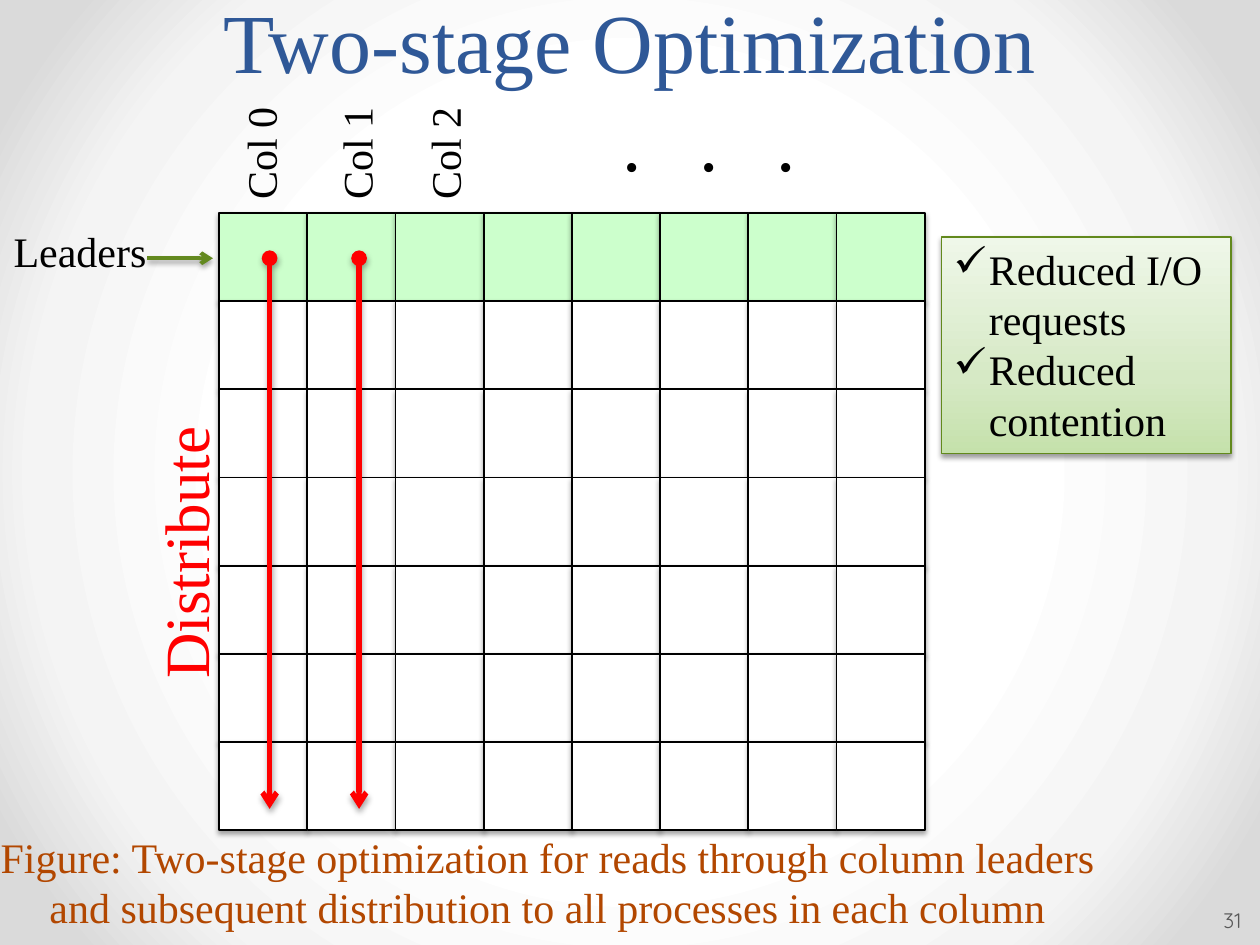
from dataclasses import dataclass

from pptx import Presentation
from pptx.dml.color import RGBColor
from pptx.enum.shapes import MSO_CONNECTOR as Connector, MSO_SHAPE as Shape
from pptx.enum.text import MSO_ANCHOR as Anchor, MSO_AUTO_SIZE as AutoSize, PP_ALIGN as Align
from pptx.oxml import parse_xml
from pptx.oxml.ns import nsdecls, qn
from pptx.util import Inches, Pt

BLACK = RGBColor(0x00, 0x00, 0x00)
WHITE = RGBColor(0xFF, 0xFF, 0xFF)
RED = RGBColor(0xFF, 0x00, 0x00)
LEADER_GREEN = RGBColor(0xCC, 0xFF, 0xCC)
ARROW_GREEN = RGBColor(0x63, 0x89, 0x1F)
BOX_GREEN = RGBColor(0x62, 0x89, 0x1C)
TITLE_BLUE = RGBColor(0x2F, 0x58, 0x97)
CAPTION_ORANGE = RGBColor(0xB2, 0x47, 0x00)
NUMBER_GRAY = RGBColor(0x59, 0x59, 0x59)
BACKDROP_STOPS = [(50, WHITE), (76, RGBColor(0xF4, 0xF4, 0xF4)), (92, RGBColor(0xDA, 0xDA, 0xDA))]
BOX_STOPS = [(0, RGBColor(0xC5, 0xE1, 0xAB)), (35, RGBColor(0xD6, 0xE9, 0xC5)),
             (100, RGBColor(0xEF, 0xF7, 0xE9))]
SERIF = "Times New Roman"

# Grid of processes
ROWS, COLUMNS, CELL = 7, 8, 0.7
GRID_LEFT, GRID_TOP = 1.74, 1.69


@dataclass
class Label:
    text: str
    left: float
    top: float
    width: float
    height: float
    size: int = 24
    color: RGBColor = BLACK
    rotation: int = 0
    align: Align = Align.CENTER
    wrap: bool = True
    font: str = SERIF


@dataclass
class Arrow:
    start: tuple[float, float]
    end: tuple[float, float]
    color: RGBColor
    width: float
    head: str = "none"


LABELS = [
    Label("Col 0", 1.44, 0.97, 1.25, 0.5, rotation=270),
    Label("Col 1", 2.2, 0.97, 1.25, 0.5, rotation=270),
    Label("Col 2", 2.9, 0.97, 1.25, 0.5, rotation=270),
    Label(".   .   .", 4.22, 0.7, 2.81, 0.84, size=44),
    Label("Leaders", -0.08, 1.74, 1.43, 0.5),
    Label("Distribute", 0.35, 4.01, 2.24, 0.71, 36, RED, 270, Align.LEFT, wrap=False),
    Label("Figure: Two-stage optimization for reads through column leaders "
          "and subsequent distribution to all processes in each column",
          -0.15, 6.55, 8.99, 0.91, color=CAPTION_ORANGE),
]
ARROWS = [
    Arrow((1.17, 2.05), (1.69, 2.05), ARROW_GREEN, 2.25),
    Arrow((2.14, 2.05), (2.14, 6.42), RED, 3, "oval"),
    Arrow((2.85, 2.05), (2.85, 6.42), RED, 3, "oval"),
]


def gradient(stops: list, direction: str):
    stop_xml = "".join(f'<a:gs pos="{position * 1000}"><a:srgbClr val="{color}"/></a:gs>'
                       for position, color in stops)
    return parse_xml(f'<a:gradFill {nsdecls("a")} rotWithShape="1">'
                     f'<a:gsLst>{stop_xml}</a:gsLst>{direction}</a:gradFill>')


def set_background(slide) -> None:
    background = parse_xml(f'<p:bg {nsdecls("p", "a")}><p:bgPr><a:effectLst/></p:bgPr></p:bg>')
    background[0].insert(0, gradient(
        BACKDROP_STOPS, '<a:path path="circle">'
        '<a:fillToRect l="50000" t="50000" r="50000" b="50000"/></a:path>'))
    slide.element.cSld.insert(0, background)


def add_shadow(shape, opacity: int = 35, distance: float = 1.8) -> None:
    properties = shape._element.spPr
    for effects in properties.findall(qn("a:effectLst")):
        properties.remove(effects)
    properties.append(parse_xml(
        f'<a:effectLst {nsdecls("a")}><a:outerShdw blurRad="{Pt(3.1)}" dist="{Pt(distance)}" '
        f'dir="5400000" rotWithShape="0"><a:srgbClr val="000000">'
        f'<a:alpha val="{opacity * 1000}"/></a:srgbClr></a:outerShdw></a:effectLst>'))


def style_text(paragraph, size: int, color: RGBColor, font: str = SERIF) -> None:
    for run in paragraph.runs:
        run.font.size = Pt(size)
        run.font.name = font
        run.font.color.rgb = color


def add_label(slide, label: Label):
    box = slide.shapes.add_textbox(Inches(label.left), Inches(label.top),
                                   Inches(label.width), Inches(label.height))
    box.rotation = label.rotation
    frame = box.text_frame
    frame.word_wrap = label.wrap
    frame.text = label.text
    frame.paragraphs[0].alignment = label.align
    style_text(frame.paragraphs[0], label.size, label.color, label.font)
    return box


def add_rectangle(slide, left: float, top: float, width: float, height: float,
                  line_color: RGBColor, line_width: float):
    rectangle = slide.shapes.add_shape(Shape.RECTANGLE, Inches(left), Inches(top),
                                       Inches(width), Inches(height))
    rectangle.line.color.rgb = line_color
    rectangle.line.width = Pt(line_width)
    return rectangle


def add_grid(slide) -> None:
    for row in range(ROWS):
        for column in range(COLUMNS):
            cell = add_rectangle(slide, GRID_LEFT + column * CELL, GRID_TOP + row * CELL,
                                 CELL, CELL, BLACK, 1)
            cell.fill.solid()
            cell.fill.fore_color.rgb = WHITE if row else LEADER_GREEN
            add_shadow(cell)


def add_arrow(slide, arrow: Arrow) -> None:
    points = [Inches(value) for value in (*arrow.start, *arrow.end)]
    connector = slide.shapes.add_connector(Connector.STRAIGHT, *points)
    connector.line.color.rgb = arrow.color
    connector.line.width = Pt(arrow.width)
    line = connector.line._get_or_add_ln()
    for tag, kind in (("headEnd", arrow.head), ("tailEnd", "arrow")):
        line.append(parse_xml(f'<a:{tag} {nsdecls("a")} type="{kind}"/>'))
    add_shadow(connector)


def add_benefits(slide, items: list[str]) -> None:
    box = add_rectangle(slide, 7.47, 1.88, 2.3, 1.72, BOX_GREEN, 0.75)
    box.fill.gradient()
    properties = box._element.spPr
    properties.replace(properties.find(qn("a:gradFill")),
                       gradient(BOX_STOPS, '<a:lin ang="16200000" scaled="0"/>'))
    add_shadow(box, 38, 1.6)
    frame = box.text_frame
    frame.word_wrap = True
    frame.vertical_anchor = Anchor.TOP
    frame.text = "\n".join(items)
    for paragraph in frame.paragraphs:
        paragraph.alignment = Align.LEFT
        style_text(paragraph, 24, BLACK)
        settings = paragraph._p.get_or_add_pPr()
        settings.set("marL", str(Inches(0.28)))
        settings.set("indent", str(Inches(-0.28)))
        settings.append(parse_xml(f'<a:buChar {nsdecls("a")} char="✓"/>'))


def set_title(slide, text: str) -> None:
    title = slide.shapes.title
    title.left, title.top, title.width, title.height = (
        Inches(value) for value in (0.5, 0, 9, 0.77))
    frame = title.text_frame
    frame.text = text
    frame.auto_size = AutoSize.NONE
    frame.vertical_anchor = Anchor.BOTTOM
    frame.paragraphs[0].alignment = Align.CENTER
    frame.paragraphs[0].line_spacing = Pt(58)
    style_text(frame.paragraphs[0], 48, TITLE_BLUE)


def add_slide_number(slide) -> None:
    number = add_label(slide, Label("31", 9.68, 7.1, 0.34, 0.4, 12, NUMBER_GRAY,
                                    align=Align.LEFT, font="Quicksand"))
    frame = number.text_frame
    frame.vertical_anchor = Anchor.MIDDLE
    frame.margin_left = Inches(0.03)
    frame.margin_top = frame.margin_right = frame.margin_bottom = Inches(0.05)


def main() -> None:
    presentation = Presentation()
    presentation.slide_width, presentation.slide_height = Inches(10), Inches(7.5)
    slide = presentation.slides.add_slide(presentation.slide_layouts[5])
    set_background(slide)
    set_title(slide, "Two-stage Optimization")
    add_grid(slide)
    for arrow in ARROWS:
        add_arrow(slide, arrow)
    for label in LABELS:
        add_label(slide, label)
    add_benefits(slide, ["Reduced I/O requests", "Reduced contention"])
    add_slide_number(slide)
    presentation.save("out.pptx")


if __name__ == "__main__":
    main()
